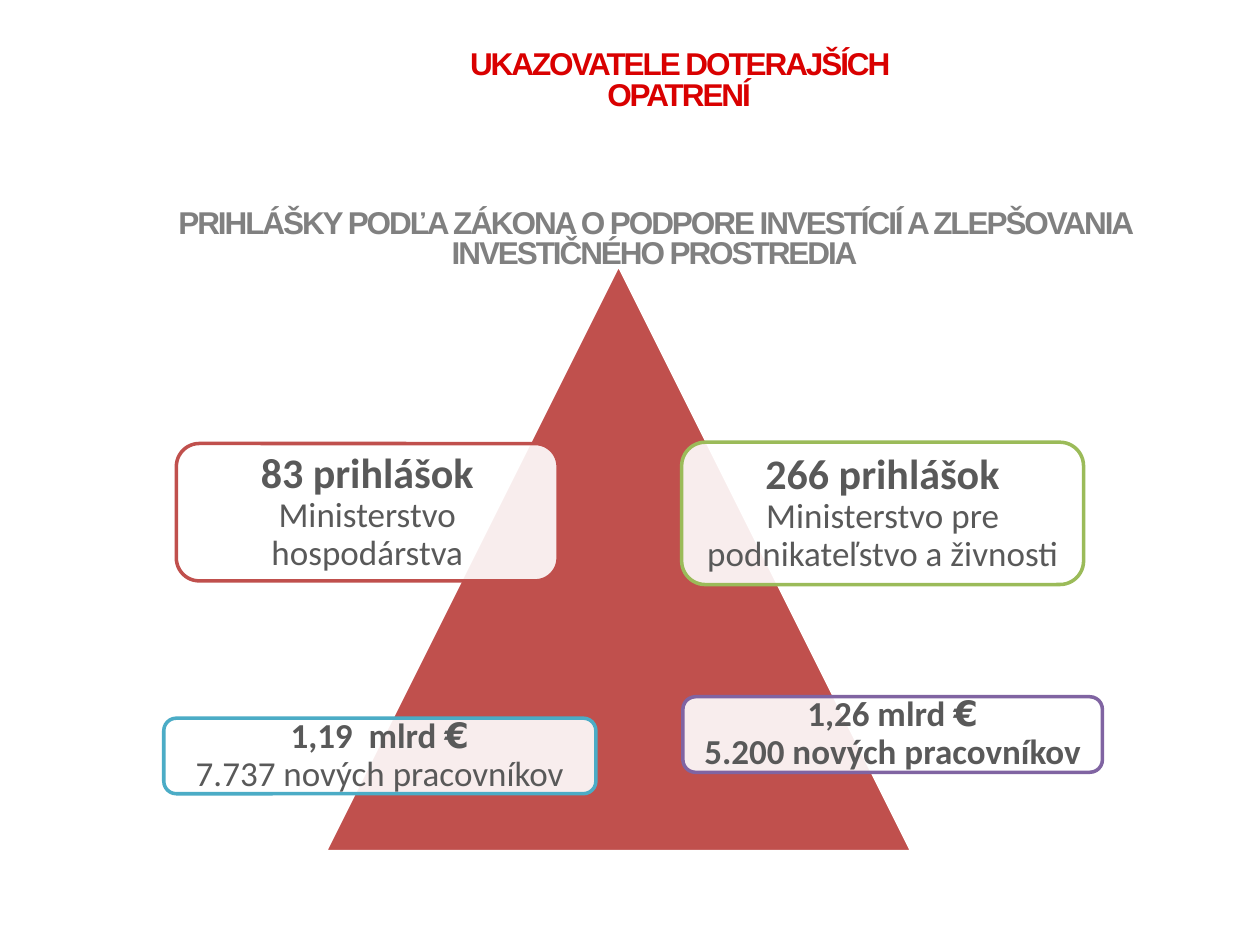
from pptx import Presentation
from pptx.dml.color import RGBColor
from pptx.enum import shapes, text
from pptx.oxml import parse_xml
from pptx.oxml.ns import nsdecls
from pptx.util import Inches, Pt

RED = RGBColor(0xC0, 0x50, 0x4D)
GREEN = RGBColor(0x9B, 0xBB, 0x59)
PURPLE = RGBColor(0x80, 0x64, 0xA2)
TEAL = RGBColor(0x4B, 0xAC, 0xC6)
WHITE = RGBColor(0xFF, 0xFF, 0xFF)
DARK = RGBColor(0x59, 0x59, 0x59)
GREY = RGBColor(0x80, 0x80, 0x80)
TITLE_RED = RGBColor(0xD9, 0x00, 0x00)


def add_shape(kind, box, fill, line):
    sp = s.shapes.add_shape(kind, *map(Inches, box))
    sp.shadow.inherit = False
    sp.fill.solid()
    sp.fill.fore_color.rgb = fill
    sp.line.color.rgb = line
    sp.line.width = Pt(2)
    return sp


def add_run(p, words, name, size, bold, color):
    r = p.add_run()
    r.text = words
    values = {"name": name, "size": Pt(size), "bold": bold}
    for key, value in values.items():
        setattr(r.font, key, value)
    r.font.color.rgb = color
    return r


prs = Presentation()
prs.slide_width, prs.slide_height = Inches(10), Inches(7.5)
s = prs.slides.add_slide(prs.slide_layouts[6])

add_shape(shapes.MSO_SHAPE.ISOSCELES_TRIANGLE, (2.58, 2.1, 4.66, 4.66), RED, WHITE)

# Box, border, inset, first line as (text, font, size), second line as (text, bold)
cards = [
    ((1.4, 3.52, 3.03, 1.09), RED, 0.1,
     [("83 prihlášok", "Calibri", 24)], ("Ministerstvo hospodárstva", False)),
    ((5.41, 3.51, 3.19, 1.13), GREEN, 0.1,
     [("266 prihlášok", "Calibri", 24)],
     ("Ministerstvo pre podnikateľstvo a živnosti", False)),
    ((5.42, 5.53, 3.33, 0.6), PURPLE, 0.08,
     [("1,26 mlrd ", "Calibri", 20), ("€", "DejaVu Sans", 20)],
     ("5.200 nových pracovníkov", True)),
    ((1.3, 5.7, 3.43, 0.6), TEAL, 0.08,
     [("1,19  mlrd ", "Calibri", 20), ("€", "DejaVu Sans", 20)],
     ("7.737 nových pracovníkov", False)),
]
for box, border, inset, headline, (detail, bold) in cards:
    sp = add_shape(shapes.MSO_SHAPE.ROUNDED_RECTANGLE, box, WHITE, border)
    color = sp.fill._xPr.solidFill[0]
    color.append(parse_xml(f'<a:alpha {nsdecls("a")} val="90000"/>'))
    tf = sp.text_frame
    tf.word_wrap = True
    tf.vertical_anchor = text.MSO_ANCHOR.MIDDLE
    for side in ("left", "right", "top", "bottom"):
        setattr(tf, f"margin_{side}", Inches(inset))
    p = tf.paragraphs[0]
    p.alignment = text.PP_ALIGN.CENTER
    p.line_spacing = 0.9
    for words, name, size in headline:
        add_run(p, words, name, size, True, DARK)
    p.add_line_break()
    p._p[-1].append(parse_xml(f'<a:rPr {nsdecls("a")} sz="{size * 100}"/>'))
    add_run(p, detail, "Calibri", 20, bold, DARK)

headings = [
    ((1.06, 1.62, 8.27, 0.59), GREY,
     "PRIHLÁŠKY PODĽA ZÁKONA O PODPORE INVESTÍCIÍ A ZLEPŠOVANIA "
     "INVESTIČNÉHO PROSTREDIA"),
    ((3.5, 0.36, 3.78, 0.59), TITLE_RED, "UKAZOVATELE DOTERAJŠÍCH OPATRENÍ"),
]
for box, color, words in headings:
    tf = s.shapes.add_textbox(*map(Inches, box)).text_frame
    tf.word_wrap = True
    tf.auto_size = text.MSO_AUTO_SIZE.SHAPE_TO_FIT_TEXT
    p = tf.paragraphs[0]
    p.alignment = text.PP_ALIGN.CENTER
    p.line_spacing = 0.8
    r = add_run(p, words, "Arial", 18, True, color)
    r.font._rPr.set("spc", "-120")

prs.save("out.pptx")
